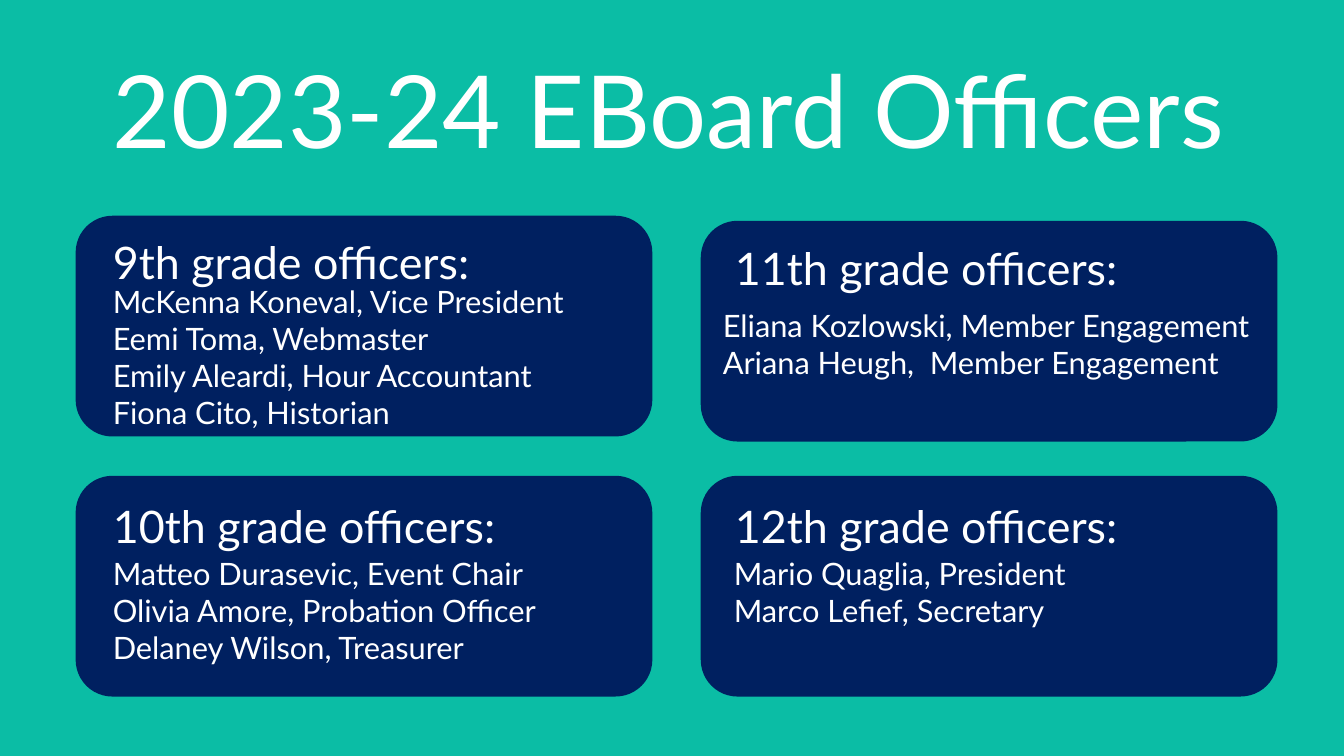
from pptx import Presentation
from pptx.dml.color import RGBColor
from pptx.enum.shapes import MSO_SHAPE
from pptx.enum.text import MSO_AUTO_SIZE
from pptx.util import Inches, Pt

COLORS = {"teal": "0BBDA5", "navy": "002060", "white": "FFFFFF"}
FONT = "Lato"
CARD_W, CARD_H = 5.72, 2.19

# Card corner, heading offset, list offset, heading, officers
GRADES = [
    ((0.75, 2.14), (0.27, 0.14), (0.27, 0.62), "9th grade officers:",
     ["McKenna Koneval, Vice President", "Eemi Toma, Webmaster",
      "Emily Aleardi, Hour Accountant", "Fiona Cito, Historian"]),
    ((0.75, 4.72), (0.27, 0.18), (0.27, 0.73), "10th grade officers:",
     ["Matteo Durasevic, Event Chair", "Olivia Amore, Probation Officer",
      "Delaney Wilson, Treasurer"]),
    ((6.95, 4.72), (0.24, 0.18), (0.23, 0.73), "12th grade officers:",
     ["Mario Quaglia, President", "Marco Lefief, Secretary"]),
    ((6.95, 2.19), (0.24, 0.15), (0.12, 0.8), "11th grade officers:",
     ["Eliana Kozlowski, Member Engagement",
      "Ariana Heugh,  Member Engagement"]),
]


def color(name):
    return RGBColor.from_string(COLORS[name])


def add_text(slide, box, lines, size):
    label = slide.shapes.add_textbox(*map(Inches, box))
    frame = label.text_frame
    frame.word_wrap = True
    frame.auto_size = MSO_AUTO_SIZE.SHAPE_TO_FIT_TEXT
    frame.text = "\n".join(lines)
    for para in frame.paragraphs:
        for run in para.runs:
            run.font.name = FONT
            run.font.size = Pt(size)
            run.font.color.rgb = color("white")


def add_card(slide, box):
    card = slide.shapes.add_shape(MSO_SHAPE.ROUNDED_RECTANGLE,
                                  *map(Inches, box))
    card.shadow.inherit = False
    card.fill.solid()
    card.fill.fore_color.rgb = color("navy")
    card.line.fill.background()


def add_grade(slide, box, head_gap, list_gap, head, names):
    left, top = box[:2]
    add_card(slide, box)
    # Heading
    add_text(slide, (left + head_gap[0], top + head_gap[1], 12.31, 0.64),
             [head], 32)
    # Officers, one line each
    height = 0.4 + 0.37 * len(names)
    add_text(slide, (left + list_gap[0], top + list_gap[1], 6.75, height),
             names, 22)


def main():
    deck = Presentation()
    deck.slide_width, deck.slide_height = Inches(13.33), Inches(7.5)
    slide = deck.slides.add_slide(deck.slide_layouts[6])
    slide.background.fill.solid()
    slide.background.fill.fore_color.rgb = color("teal")

    # Title
    add_text(slide, (1.02, 0.42, 12.31, 1.31), ["2023-24 EBoard Officers"], 72)

    # Grade cards
    for corner, head_gap, list_gap, head, names in GRADES:
        add_grade(slide, (*corner, CARD_W, CARD_H),
                  head_gap, list_gap, head, names)

    deck.save("out.pptx")


if __name__ == "__main__":
    main()
